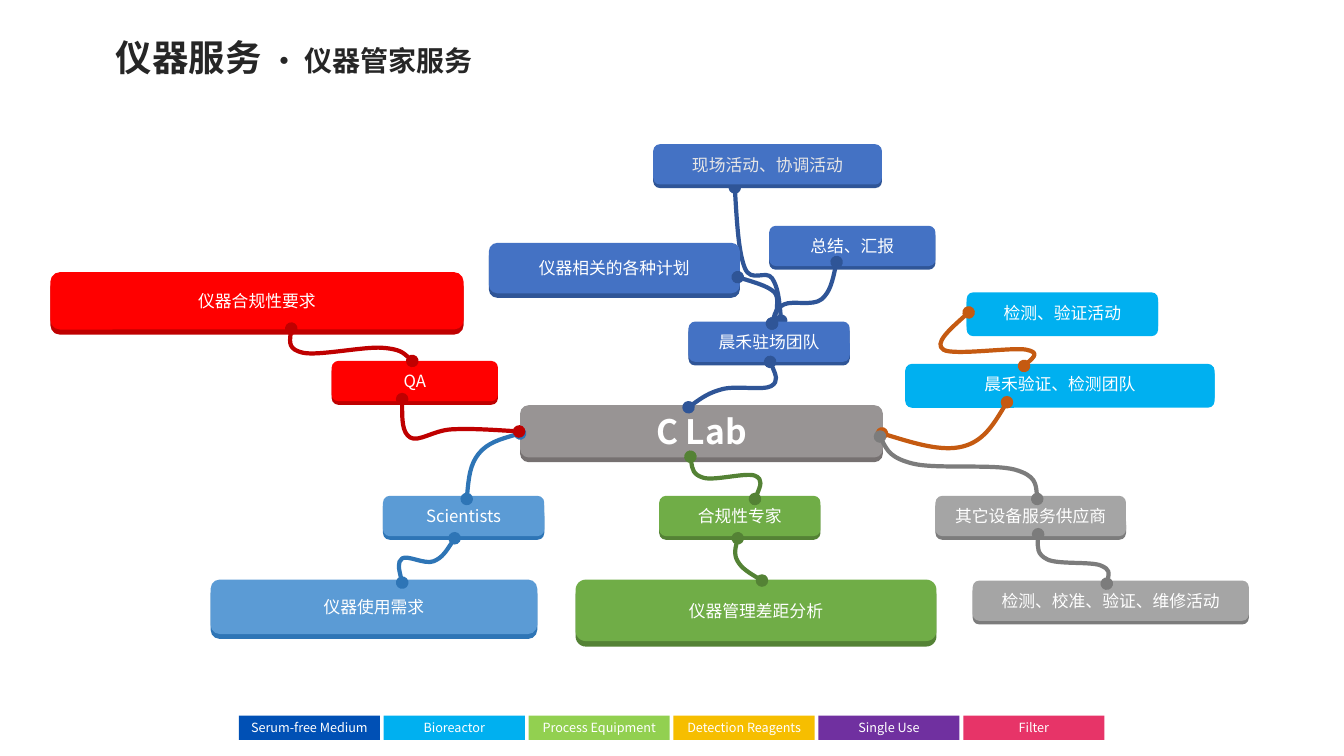
from lxml.etree import SubElement
from pptx import Presentation
from pptx.dml.color import RGBColor
from pptx.enum.shapes import MSO_SHAPE
from pptx.enum.text import MSO_ANCHOR, PP_ALIGN
from pptx.oxml.ns import qn
from pptx.util import Pt

FONT = "Noto Sans CJK SC"
WHITE = RGBColor(0xFF, 0xFF, 0xFF)
PALE = RGBColor(0xE7, 0xE6, 0xE6)
INK = RGBColor(0x26, 0x26, 0x26)
NAVY, ROYAL = RGBColor(0x2F, 0x55, 0x97), RGBColor(0x44, 0x72, 0xC4)
CRIMSON, RED = RGBColor(0xBF, 0x00, 0x00), RGBColor(0xFF, 0x00, 0x00)
STEEL, SKY = RGBColor(0x2E, 0x75, 0xB6), RGBColor(0x5B, 0x9B, 0xD5)
FOREST, GREEN = RGBColor(0x54, 0x82, 0x35), RGBColor(0x70, 0xAD, 0x47)
SLATE, GRAY = RGBColor(0x7C, 0x7C, 0x7C), RGBColor(0xA5, 0xA5, 0xA5)
HUB_EDGE, HUB = RGBColor(0x76, 0x71, 0x71), RGBColor(0x98, 0x94, 0x94)
RUST, CYAN = RGBColor(0xC5, 0x5A, 0x11), RGBColor(0x00, 0xB0, 0xF0)

PRODUCT_LINES = [
    ("Serum-free Medium", RGBColor(0x00, 0x50, 0xB5)),
    ("Bioreactor", CYAN),
    ("Process Equipment", RGBColor(0x92, 0xD0, 0x50)),
    ("Detection Reagents", RGBColor(0xF6, 0xBE, 0x00)),
    ("Single Use", RGBColor(0x70, 0x30, 0xA0)),
    ("Filter", RGBColor(0xE7, 0x34, 0x68)),
]

# Label, (left, top, width, height), face colour, edge colour
TOPICS = [
    ("C Lab", (371.5, 289.4, 259.2, 37.4), HUB, HUB_EDGE),
    ("晨禾驻场团队", (491.8, 229.7, 115.2, 28.8), ROYAL, NAVY),
    ("仪器相关的各种计划", (349.2, 173.5, 179.3, 36), ROYAL, NAVY),
    ("总结、汇报", (549.4, 161.3, 118.8, 28.8), ROYAL, NAVY),
    ("QA", (236.9, 257.8, 118.8, 28.8), RED, CRIMSON),
    ("仪器合规性要求", (36, 194.4, 295.2, 41), RED, CRIMSON),
    ("晨禾验证、检测团队", (646.6, 259.9, 221, 28.8), CYAN, CYAN),
    ("检测、验证活动", (690.5, 208.8, 136.8, 28.8), CYAN, CYAN),
    ("合规性专家", (470.9, 354.2, 115.2, 28.8), GREEN, FOREST),
    ("Scientists", (273.6, 354.2, 115.2, 28.8), SKY, STEEL),
    ("其它设备服务供应商", (668.2, 354.2, 136.1, 28.8), GRAY, SLATE),
    ("检测、校准、验证、维修活动", (694.8, 414.7, 197.3, 28.8), GRAY, SLATE),
    ("仪器管理差距分析", (411.1, 414, 257.8, 43.9), GREEN, FOREST),
    ("仪器使用需求", (150.5, 414, 233.3, 38.9), SKY, STEEL),
]
SITE_TOPIC = ("现场活动、协调活动", (466.6, 103, 163.4, 28.8), ROYAL, NAVY)

# Points that each branch runs through
SITE_BRANCH = (NAVY, [(558, 229), (551.5, 198.7), (532.1, 191.5), (524.9, 133.9)])
BRANCHES = [
    (NAVY, [(491.8, 290.9), (516.2, 277.9), (550.8, 275.8), (550.1, 258.5)]),
    (NAVY, [(551.5, 231.1), (560.2, 217.4), (586.8, 213.8), (597.6, 187.2)]),
    (NAVY, [(551.5, 231.1), (555.1, 218.2), (551.5, 207.4), (527, 198)]),
    (RUST, [(630, 309.6), (687.6, 319), (719.3, 287.3)]),
    (RUST, [(731.5, 261.4), (733, 249.8), (673.9, 249.8), (691.9, 223.2)]),
    (SLATE, [(628.6, 311.8), (652.3, 331.2), (725, 335.5), (740.9, 356.4)]),
    (SLATE, [(741.6, 381.6), (748.1, 399.6), (786.2, 403.9), (790.6, 416.9)]),
    (FOREST, [(493.2, 326.2), (502.6, 341.3), (539.3, 339.8), (539.3, 356.4)]),
    (FOREST, [(527, 384.5), (527, 401), (544.3, 414.7)]),
    (STEEL, [(371.5, 309.6), (342, 324), (333.4, 356.4)]),
    (STEEL, [(324.7, 384.5), (309.6, 401), (287.3, 398.9), (287.3, 416.2)]),
    (CRIMSON, [(370.8, 308.2), (322.6, 306.7), (293, 312.5), (287.3, 285.1)]),
    (CRIMSON, [(294.5, 257.8), (272.9, 248.4), (216.7, 252), (208.1, 234.7)]),
]


def style_run(run, size, color, bold=False):
    run.font.size, run.font.bold, run.font.name = Pt(size), bold, FONT
    run.font.color.rgb = color
    SubElement(run.font._element, qn("a:ea")).set("typeface", FONT)


def add_block(slide, preset, box, fill, label="", size=12, color=WHITE, bold=False):
    block = slide.shapes.add_shape(preset, *(Pt(v) for v in box))
    block.shadow.inherit = False
    block.fill.solid()
    block.fill.fore_color.rgb = fill
    block.line.fill.background()
    if label:
        frame = block.text_frame
        frame.margin_left = frame.margin_right = 0
        frame.margin_top = frame.margin_bottom = 0
        frame.vertical_anchor = MSO_ANCHOR.MIDDLE
        frame.text = label
        frame.paragraphs[0].alignment = PP_ALIGN.CENTER
        style_run(frame.paragraphs[0].runs[0], size, color, bold)


def add_topic(slide, left, top, topic, size=12, color=WHITE, bold=False):
    """A face block over an edge block that shows below it."""
    label, (x, y, width, height), face, edge = topic
    x, y = left + x, top + y
    depth = 0.09 * height
    add_block(slide, MSO_SHAPE.ROUNDED_RECTANGLE, (x, y + depth, width, height), edge)
    add_block(slide, MSO_SHAPE.ROUNDED_RECTANGLE, (x, y, width, height), face,
              label, size, color, bold)


def curve_controls(knots):
    """Bezier points of a smooth curve: tangents follow the neighbouring knots."""
    def shifted(i, sign):
        if i in (0, len(knots) - 1):
            return None
        return tuple(k + sign * (b - a) / 6
                     for k, a, b in zip(knots[i], knots[i - 1], knots[i + 1]))

    def midpoint(p, q):
        return tuple((a + b) / 2 for a, b in zip(p, q))

    controls = []
    for i in range(len(knots) - 1):
        leave, arrive = shifted(i, 1), shifted(i + 1, -1)
        leave = leave or midpoint(knots[i], arrive)
        arrive = arrive or midpoint(leave, knots[i + 1])
        controls += [leave, arrive, knots[i + 1]]
    return controls


def add_branch(slide, left, top, color, knots):
    points = [(Pt(left + x), Pt(top + y))
              for x, y in [knots[0]] + curve_controls(knots)]
    builder = slide.shapes.build_freeform(*points[0])
    builder.add_line_segments(points[1:], close=False)
    branch = builder.convert_to_shape()
    branch.shadow.inherit = False
    branch.fill.background()
    branch.line.color.rgb = color
    branch.line.width = Pt(3)

    # Every three line points become one cubic curve
    outline = next(branch._element.iter(qn("a:path")))
    steps = outline.findall(qn("a:lnTo"))
    for i in range(0, len(steps), 3):
        cubic = SubElement(outline, qn("a:cubicBezTo"))
        for step in steps[i:i + 3]:
            cubic.append(step[0])
            outline.remove(step)

    # Round dots at both ends
    stroke = branch.line._get_or_add_ln()
    for end in ("a:headEnd", "a:tailEnd"):
        SubElement(stroke, qn(end)).set("type", "oval")


def add_title(slide, left, top, width, height):
    title = slide.shapes.title
    title.left, title.top, title.width, title.height = map(Pt, (left, top, width, height))
    frame = title.text_frame
    frame.word_wrap = True
    frame.vertical_anchor = MSO_ANCHOR.MIDDLE
    heading = frame.paragraphs[0]
    heading.alignment = PP_ALIGN.LEFT
    for words, size in (("仪器服务 ", 26), ("· 仪器管家服务", 20)):
        run = heading.add_run()
        run.text = words
        style_run(run, size, INK, bold=True)


def add_service_map(slide, left, top):
    add_branch(slide, left, top, *SITE_BRANCH)
    hub, *others = TOPICS
    add_topic(slide, left, top, hub, size=24, bold=True)
    for topic in others:
        add_topic(slide, left, top, topic)
    for color, knots in BRANCHES:
        add_branch(slide, left, top, color, knots)
    add_topic(slide, left, top, SITE_TOPIC, color=PALE)


def add_product_bar(slide, left, top, width, height):
    gap = 2.7
    cell = (width + gap) / len(PRODUCT_LINES) - gap
    for i, (product, color) in enumerate(PRODUCT_LINES):
        add_block(slide, MSO_SHAPE.RECTANGLE,
                  (left + i * (cell + gap), top, cell, height), color, product, size=9)


def main():
    deck = Presentation()
    deck.slide_width, deck.slide_height = Pt(960), Pt(540)
    slide = deck.slides.add_slide(deck.slide_layouts[5])
    add_product_bar(slide, 170.6, 511.2, 618.3, 17.3)
    add_title(slide, 75.6, 20.9, 354.2, 38.9)
    add_service_map(slide, 0, 0)
    deck.save("out.pptx")


if __name__ == "__main__":
    main()
